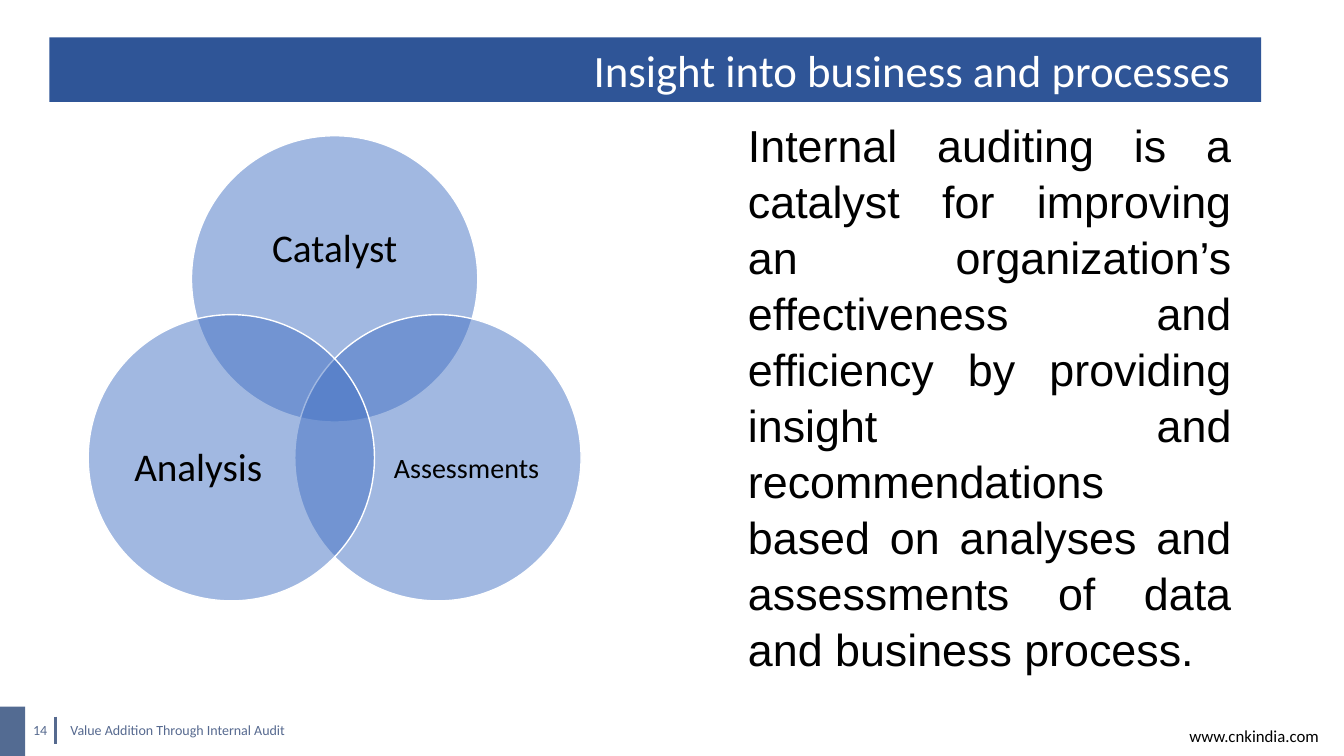
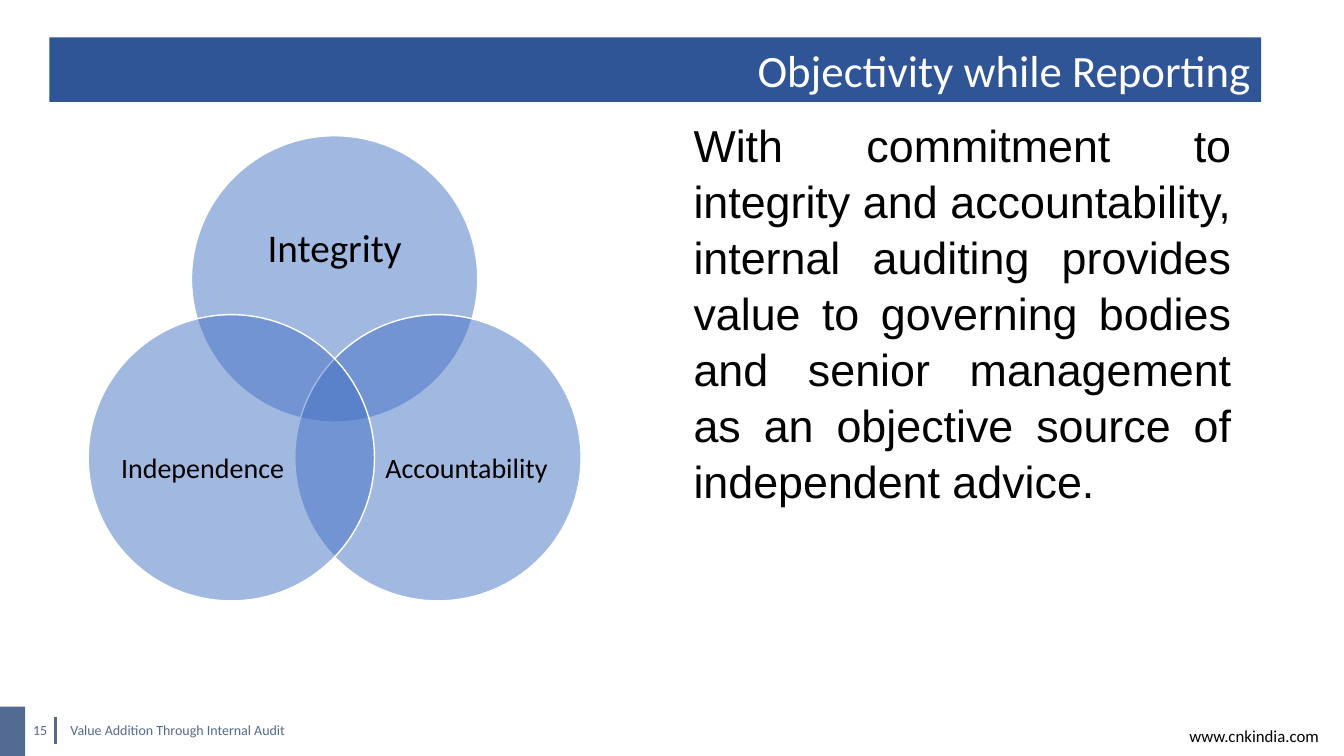
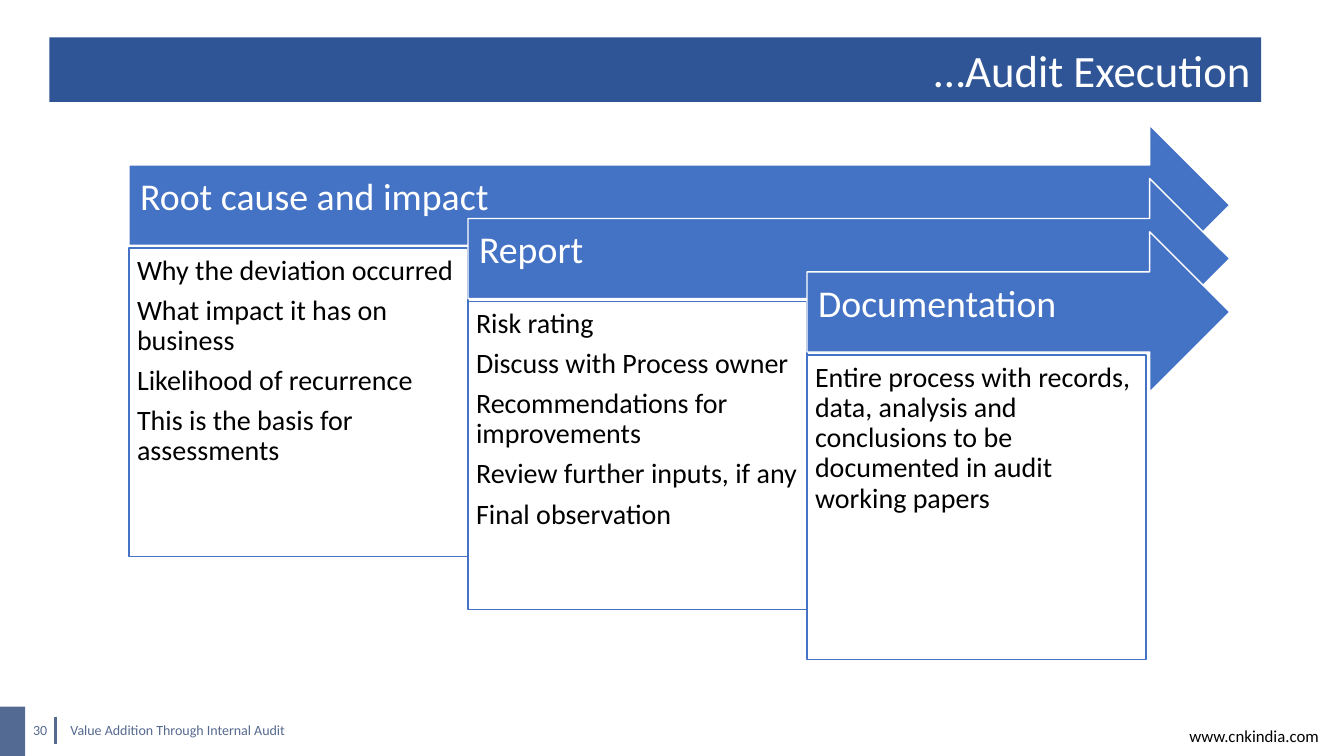
from dataclasses import dataclass
from math import cos, radians, sin
from typing import NamedTuple

from lxml.etree import SubElement
from pptx import Presentation
from pptx.dml.color import RGBColor
from pptx.enum.shapes import MSO_CONNECTOR, MSO_SHAPE
from pptx.enum.text import MSO_ANCHOR, MSO_AUTO_SIZE, PP_ALIGN
from pptx.oxml.ns import qn
from pptx.util import Inches, Pt

COLORS = {
    "band": "2F5597", "accent": "4472C4", "tab": "536B92",
    "number": "566A8F", "footer": "56698F", "white": "FFFFFF", "black": "000000",
}
GRID = 0.1  # inches per square grid cell
COLS, ROWS = 133.33, 75
TITLE_LAYOUT, BODY_LAYOUT = 5, 1


class Box(NamedTuple):
    """Left, top, width and height in grid cells."""
    col: float
    row: float
    cols: float
    rows: float


class Petal(NamedTuple):
    """Circle direction in degrees; label shift and size as shares of the diameter."""
    angle: int
    dx: float
    dy: float
    width: float
    height: float


class Label(NamedTuple):
    text: str
    size: int = 28


@dataclass
class VennPage:
    number: int
    title: str
    body: str
    body_box: Box
    labels: list[Label]
    title_inset: float = 1


@dataclass
class Step:
    heading: str
    points: list[str]
    rows: float = 30.6


BAND = Box(4.9, 3.7, 120.2, 6.4)
PETALS = [
    Petal(-90, 0, -0.1, 0.73, 0.45),
    Petal(30, 0.1, 0.04, 0.6, 0.55),
    Petal(150, -0.1, 0.04, 0.6, 0.55),
]
VENN_COL, VENN_ROW, DIAMETER = 33.2, 39.5, 28.4
SPREAD = DIAMETER * 5 / 12

STEP_COL, STEP_ROW, STEP_RIGHT = 12.8, 12.4, 122
STEP_COLS, STEP_DROP = 33.63, 5.3
ARROW_ROWS, POINTS_DROP = 15.9, 12.2

DIAGRAM_TEXT = {"line_spacing": 0.9, "space_after": Pt(7)}

VENN_PAGES = [
    VennPage(
        14, "Insight into business and processes",
        "Internal auditing is a catalyst for improving an organization’s effectiveness "
        "and efficiency by providing insight and recommendations based on analyses and "
        "assessments of data and business process.",
        Box(73.2, 11, 50, 54.9),
        [Label("Catalyst"), Label("Assessments", 20), Label("Analysis ")],
        title_inset=3,
    ),
    VennPage(
        15, "Objectivity while Reporting",
        "With commitment to integrity and accountability, internal auditing provides "
        "value to governing bodies and senior management as an objective source of "
        "independent advice.",
        Box(67.8, 11, 55.4, 38.7),
        [Label("Integrity"), Label("Accountability", 20), Label("Independence", 20)],
    ),
]
STEPS = [
    Step("Root cause and impact", [
        "Why the deviation occurred", "What impact it has on business",
        "Likelihood of recurrence", "This is the basis for assessments"]),
    Step("Report", [
        "Risk rating", "Discuss with Process owner", "Recommendations for improvements",
        "Review further inputs, if any", "Final observation"]),
    Step("Documentation", [
        "Entire process with records, data, analysis and conclusions to be documented "
        "in audit working papers"], rows=30.2),
]


def cells(n: float) -> int:
    return Inches(n * GRID)


def rgb(name: str) -> RGBColor:
    return RGBColor.from_string(COLORS[name])


def place(sp, box: Box) -> None:
    sp.left, sp.top, sp.width, sp.height = map(cells, box)


def write(sp, texts: list[str], size: float, color: str = "black", font: str = "Calibri",
          align=PP_ALIGN.LEFT, anchor=MSO_ANCHOR.TOP, insets=(1, 0.5, 1, 0.5),
          **paragraph) -> None:
    """Fill a shape with unbulleted paragraphs; insets are left, top, right, bottom."""
    tf = sp.text_frame
    frame = {"word_wrap": True, "auto_size": MSO_AUTO_SIZE.NONE, "vertical_anchor": anchor}
    frame |= zip(("margin_left", "margin_top", "margin_right", "margin_bottom"),
                 map(cells, insets))
    for name, value in frame.items():
        setattr(tf, name, value)
    for i, text in enumerate(texts):
        p = tf.paragraphs[0] if i == 0 else tf.add_paragraph()
        pPr = p._p.get_or_add_pPr()
        pPr.set("marL", "0")
        pPr.set("indent", "0")
        SubElement(pPr, qn("a:buNone"))
        for name, value in ({"alignment": align, "space_before": Pt(0)} | paragraph).items():
            setattr(p, name, value)
        r = p.add_run()
        r.text = text
        for name, value in {"name": font, "size": Pt(size), "bold": False}.items():
            setattr(r.font, name, value)
        r.font.color.rgb = rgb(color)


def add_text(s, box: Box, text: str, size: float, **style) -> None:
    write(s.shapes.add_textbox(*map(cells, box)), [text], size, **style)


def add_shape(s, kind, box: Box, fill: str, line: str | None = None):
    sp = s.shapes.add_shape(kind, *map(cells, box))
    sp.shadow.inherit = False
    sp.fill.solid()
    sp.fill.fore_color.rgb = rgb(fill)
    if line:
        sp.line.color.rgb = rgb(line)
        sp.line.width = Pt(1)
    else:
        sp.line.fill.background()
    return sp


def add_page(prs, layout: int, number: int, title: str, title_inset: float = 1):
    """Add a slide with the title band and the footer that all slides share."""
    s = prs.slides.add_slide(prs.slide_layouts[layout])
    band = s.shapes.title
    place(band, BAND)
    band.fill.solid()
    band.fill.fore_color.rgb = rgb("band")
    write(band, [title], 32, "white", align=PP_ALIGN.RIGHT, anchor=MSO_ANCHOR.MIDDLE,
          insets=(1, 0.5, title_inset, 0.5))

    add_shape(s, MSO_SHAPE.RECTANGLE, Box(0, 70.1, 2.5, 4.9), "tab")
    add_text(s, Box(2.3, 70.4, 4.1, 4), str(number), 10, color="number",
             anchor=MSO_ANCHOR.MIDDLE)
    rule = s.shapes.add_connector(MSO_CONNECTOR.STRAIGHT, *map(cells, (5.5, 71.1, 5.5, 73.8)))
    rule.line.color.rgb = rgb("number")
    rule.line.width = Pt(1.75)
    SubElement(rule._element.spPr, qn("a:effectLst"))
    add_text(s, Box(6, 71.1, 27.2, 3.5), "Value Addition Through Internal Audit", 10,
             color="footer")
    add_text(s, Box(117, 71.5, 16, 3), "www.cnkindia.com", 12)
    return s


def add_venn(s, labels: list[Label]) -> None:
    for petal, label in zip(PETALS, labels):
        x = VENN_COL + SPREAD * cos(radians(petal.angle))
        y = VENN_ROW + SPREAD * sin(radians(petal.angle))
        circle = add_shape(s, MSO_SHAPE.OVAL,
                           Box(x - DIAMETER / 2, y - DIAMETER / 2, DIAMETER, DIAMETER),
                           "accent", "white")
        color = circle._element.spPr.find(qn("a:solidFill")).find(qn("a:srgbClr"))
        SubElement(color, qn("a:alpha"), val="50000")

        width, height = petal.width * DIAMETER, petal.height * DIAMETER
        add_text(s, Box(x + petal.dx * DIAMETER - width / 2,
                        y + petal.dy * DIAMETER - height / 2, width, height),
                 label.text, label.size, align=PP_ALIGN.CENTER, anchor=MSO_ANCHOR.MIDDLE,
                 insets=(0, 0, 0, 0), **DIAGRAM_TEXT)


def add_steps(s, steps: list[Step]) -> None:
    """Draw overlapping arrows, each lower and further right, with points below."""
    for i, step in enumerate(steps):
        col, row = STEP_COL + i * STEP_COLS, STEP_ROW + i * STEP_DROP
        arrow = add_shape(s, MSO_SHAPE.RIGHT_ARROW,
                          Box(col, row, STEP_RIGHT - col, ARROW_ROWS), "accent", "white")
        write(arrow, [step.heading], 27, "white", anchor=MSO_ANCHOR.MIDDLE,
              insets=(1.1, 1.1, 2.8, 2.5), **DIAGRAM_TEXT)
        panel = add_shape(s, MSO_SHAPE.RECTANGLE,
                          Box(col, row + POINTS_DROP, STEP_COLS, step.rows),
                          "white", "accent")
        write(panel, step.points, 20, insets=(0.8, 0.8, 0.8, 0.8), **DIAGRAM_TEXT)


def main() -> None:
    prs = Presentation()
    prs.slide_width, prs.slide_height = cells(COLS), cells(ROWS)
    for page in VENN_PAGES:
        s = add_page(prs, BODY_LAYOUT, page.number, page.title, page.title_inset)
        body = s.placeholders[1]
        place(body, page.body_box)
        write(body, [page.body], 32, font="Arial", align=PP_ALIGN.JUSTIFY, line_spacing=1.04)
        add_venn(s, page.labels)
    add_steps(add_page(prs, TITLE_LAYOUT, 30, "…Audit Execution"), STEPS)
    prs.save("out.pptx")


if __name__ == "__main__":
    main()
